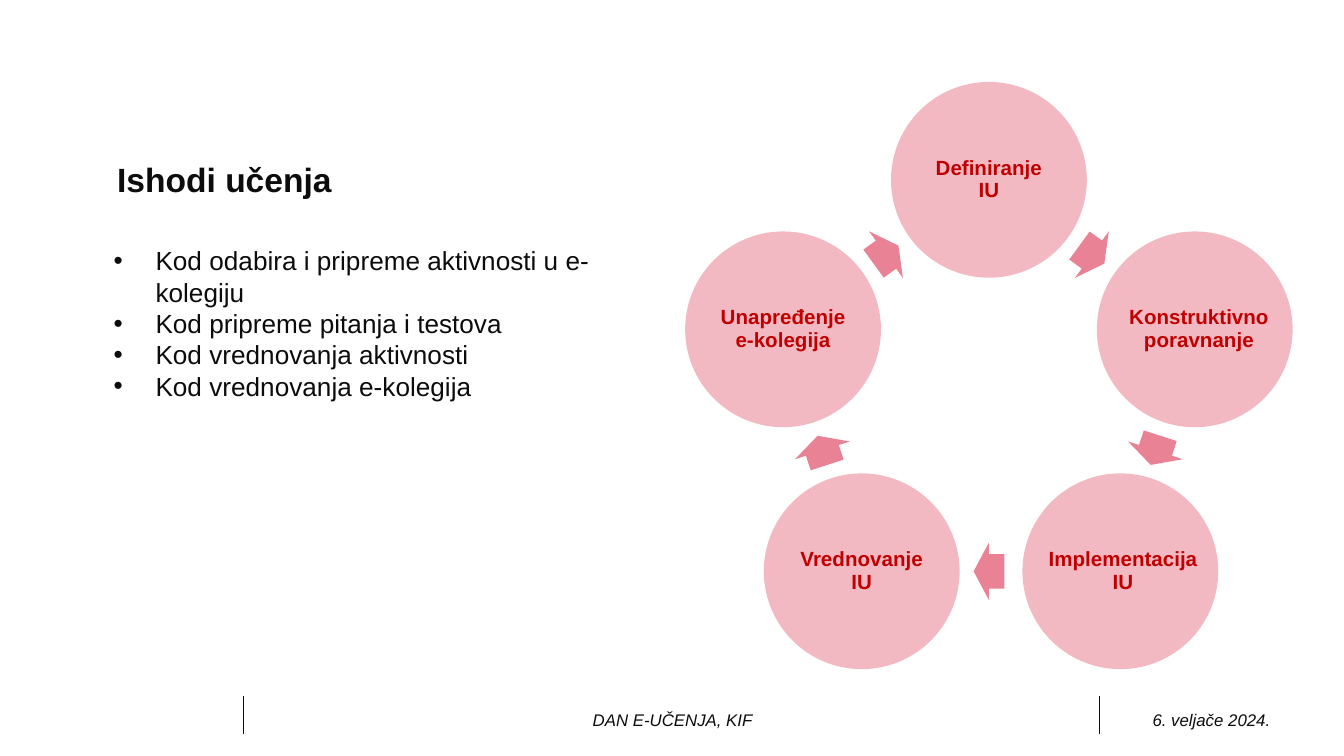
from math import cos, radians, sin

from lxml import etree
from pptx import Presentation
from pptx.dml.color import RGBColor
from pptx.enum.shapes import MSO_CONNECTOR, MSO_SHAPE
from pptx.enum.text import MSO_ANCHOR, PP_ALIGN
from pptx.oxml.ns import qn
from pptx.util import Cm, Pt

STRAIGHT = MSO_CONNECTOR.STRAIGHT
ELLIPSE, ARROW = MSO_SHAPE.OVAL, MSO_SHAPE.RIGHT_ARROW
TOP, MIDDLE = MSO_ANCHOR.TOP, MSO_ANCHOR.MIDDLE
LEFT, CENTER = PP_ALIGN.LEFT, PP_ALIGN.CENTER

FONT = "Arial"
INK, RED, LABEL = "0C0C0C", "D2072A", "C00000"
RING_X, RING_Y, RING_R = 18.69, 7.49, 4.09
CIRCLE, LABEL_H = 3.7, 2.62
ARROW_W, ARROW_H = 0.58, 1.09

STEPS = [  # label, label width, circle shift, label shift
    ("Definiranje\nIU", 2.62, 0, 0),
    ("Konstruktivno poravnanje", 2.79, 0, 0.08),
    ("Implementacija IU", 3, 0.08, 0.05),
    ("Vrednovanje\nIU", 2.62, 0, 0),
    ("Unapređenje\ne-kolegija", 2.62, 0, 0),
]
BULLETS = [
    "Kod odabira i pripreme aktivnosti u e-kolegiju",
    "Kod pripreme pitanja i testova",
    "Kod vrednovanja aktivnosti",
    "Kod vrednovanja e-kolegija",
]


def rgb(value):
    """Return a colour from a hex string."""
    return RGBColor.from_string(value)


def add_runs(p, text, size, color, bold=False, italic=False):
    """Add text to a paragraph, one run per line."""
    for i, line in enumerate(text.split("\n")):
        if i:
            p.add_line_break()
        r = p.add_run()
        r.text = line
        r.font.name, r.font.size = FONT, Pt(size)
        r.font.bold, r.font.italic = bold, italic
        r.font.color.rgb = rgb(color)


def add_box(s, x, y, w, h, anchor=TOP, inset=None):
    """Add a wrapping text box and return its text frame."""
    tf = s.shapes.add_textbox(Cm(x), Cm(y), Cm(w), Cm(h)).text_frame
    tf.word_wrap, tf.vertical_anchor = True, anchor
    if inset is not None:
        tf.margin_left = tf.margin_right = Cm(inset)
        tf.margin_top = tf.margin_bottom = Cm(inset)
    return tf


def add_centered(s, x, y, w, h, text, size, color, inset=None, spacing=1.0, **style):
    """Add a text box with one centred paragraph."""
    p = add_box(s, x, y, w, h, MIDDLE, inset).paragraphs[0]
    p.alignment, p.line_spacing = CENTER, spacing
    add_runs(p, text, size, color, **style)


def add_solid(s, kind, cx, cy, w, h, alpha):
    """Add a translucent red shape around a centre point."""
    sp = s.shapes.add_shape(kind, Cm(cx - w / 2), Cm(cy - h / 2), Cm(w), Cm(h))
    sp.shadow.inherit = False
    sp.line.fill.background()
    sp.fill.solid()
    sp.fill.fore_color.rgb = rgb(RED)
    clr = sp._element.spPr.find(qn("a:solidFill"))[0]
    etree.SubElement(clr, qn("a:alpha"), val=str(alpha * 1000))
    return sp


def ring_point(step):
    """Return the centre of a step on the ring."""
    angle = radians(step * 360 / len(STEPS))
    return RING_X + RING_R * sin(angle), RING_Y - RING_R * cos(angle)


def add_cycle(s):
    """Add the ring of labelled circles and the arrows between them."""
    for i, (label, width, circle_dx, label_dx) in enumerate(STEPS):
        x, y = ring_point(i)
        next_x, next_y = ring_point(i + 1)
        cx = x + circle_dx
        add_solid(s, ELLIPSE, cx, y, CIRCLE, CIRCLE, 28)
        add_centered(s, cx + label_dx - width / 2, y - LABEL_H / 2, width, LABEL_H,
                     label, 11, LABEL, inset=0.05, spacing=0.9, bold=True)
        arrow = add_solid(s, ARROW, (x + next_x) / 2, (y + next_y) / 2,
                          ARROW_W, ARROW_H, 50)
        arrow.adjustments[0], arrow.adjustments[1] = 0.6, 0.5
        arrow.rotation = (i + 0.5) * 360 / len(STEPS)


def add_title(s, text):
    """Place and format the title placeholder."""
    sp = s.shapes.title
    sp.left, sp.top, sp.width, sp.height = Cm(1.96), Cm(2.87), Cm(8.81), Cm(1.02)
    tf = sp.text_frame
    tf.word_wrap, tf.vertical_anchor = True, TOP
    p = tf.paragraphs[0]
    p.alignment = LEFT
    add_runs(p, text, 18, INK, bold=True)


def add_bullets(s):
    """Add the bulleted list."""
    tf = add_box(s, 1.9, 4.5, 9.68, 3.25)
    for i, text in enumerate(BULLETS):
        p = tf.add_paragraph() if i else tf.paragraphs[0]
        pPr = p._p.get_or_add_pPr()
        pPr.set("marL", str(Cm(0.79)))
        pPr.set("indent", str(-Cm(0.79)))
        etree.SubElement(pPr, qn("a:buFont"), typeface=FONT)
        etree.SubElement(pPr, qn("a:buChar"), char="•")
        add_runs(p, text, 14, INK)


def add_divider(s, x):
    """Add a thin vertical footer line."""
    line = s.shapes.add_connector(STRAIGHT, Cm(x), Cm(13.16), Cm(x), Cm(13.87))
    line.line.color.rgb, line.line.width = rgb(INK), Pt(0.5)
    etree.SubElement(line._element.spPr, qn("a:effectLst"))


def main():
    """Build and save the slide."""
    prs = Presentation()
    prs.slide_width, prs.slide_height = Cm(25.4), Cm(14.29)
    s = prs.slides.add_slide(prs.slide_layouts[5])
    for x in (4.6, 20.78):
        add_divider(s, x)
    for x, w, text in ((21.23, 3.33, "6. veljače 2024."), (5.74, 13.94, "DAN E-UČENJA, KIF")):
        add_centered(s, x, 13.23, w, 0.76, text, 9, INK, italic=True)
    add_cycle(s)
    add_bullets(s)
    add_title(s, "Ishodi učenja")
    prs.save("out.pptx")


if __name__ == "__main__":
    main()
